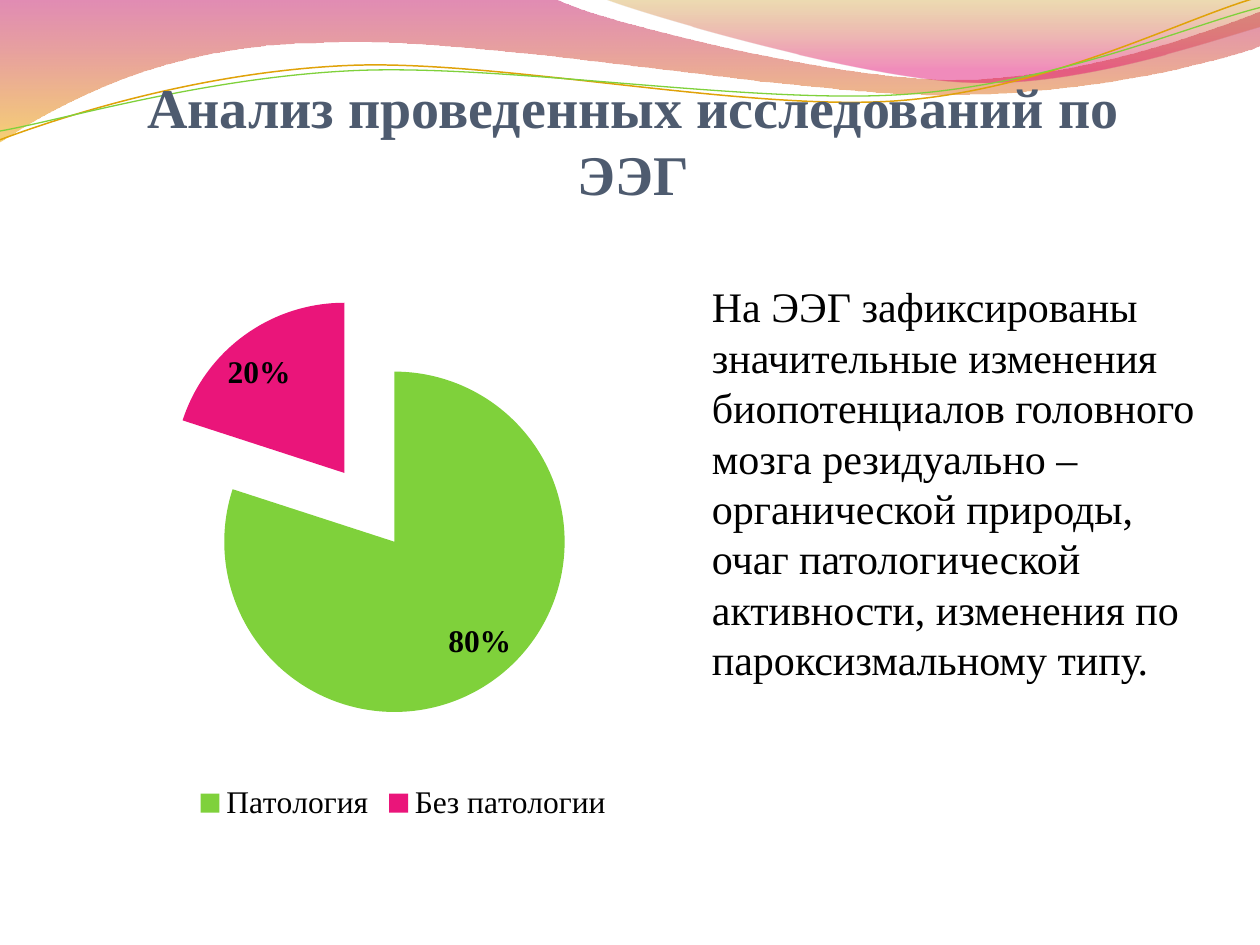
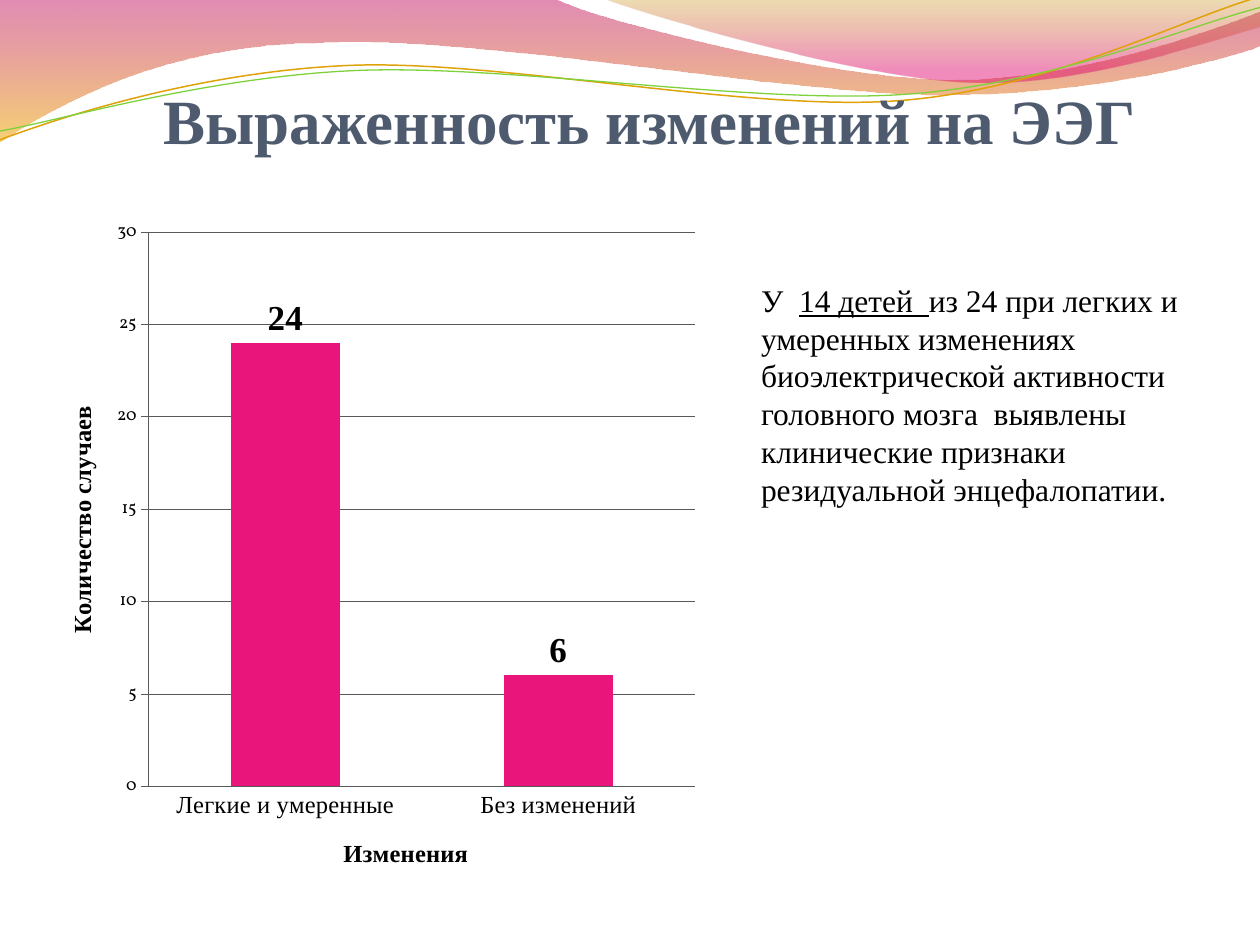
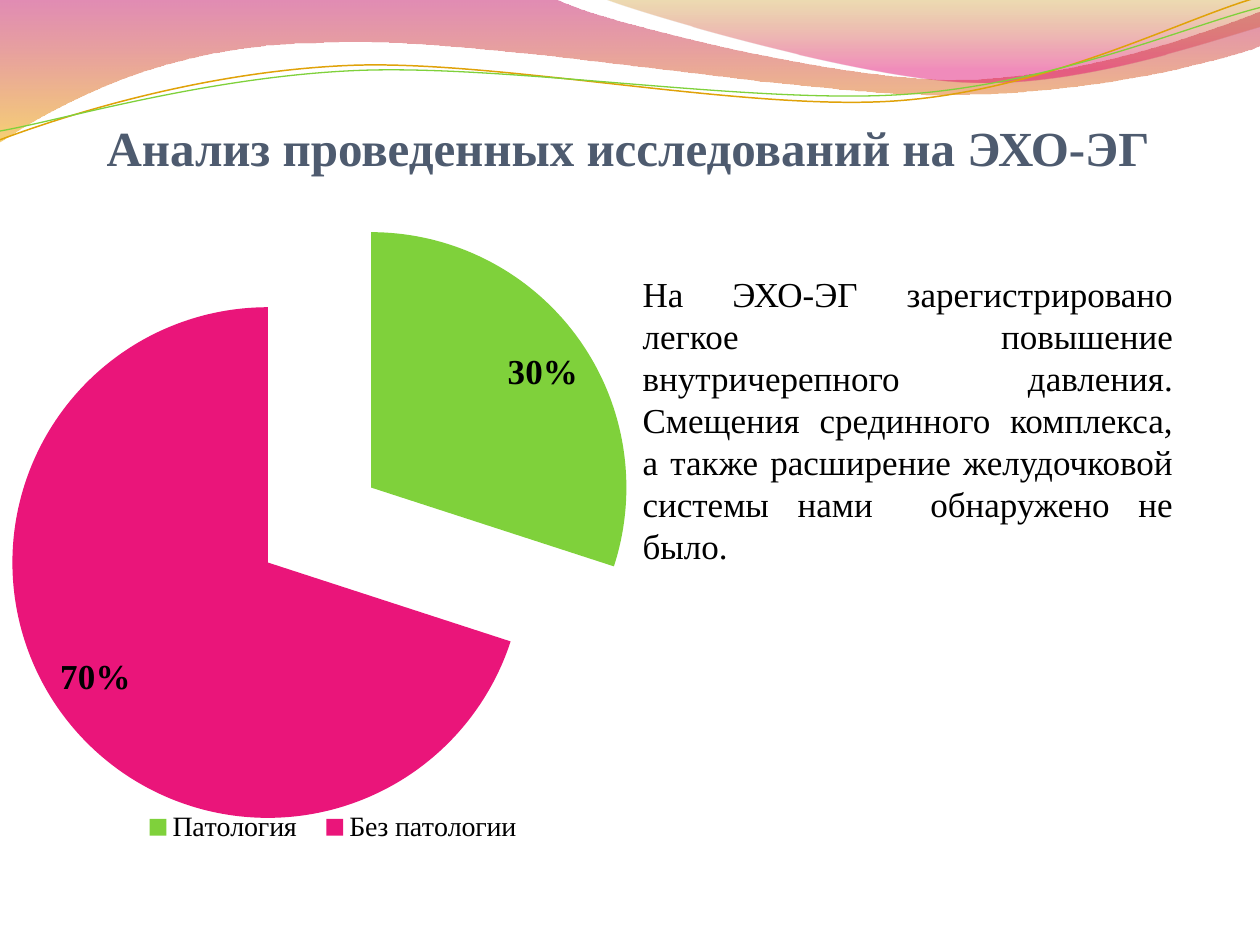
from lxml import etree
from pptx import Presentation
from pptx.chart.data import CategoryChartData
from pptx.dml.color import RGBColor
from pptx.enum.chart import XL_CHART_TYPE, XL_LABEL_POSITION, XL_LEGEND_POSITION, XL_TICK_MARK
from pptx.enum.text import MSO_ANCHOR, PP_ALIGN
from pptx.oxml import parse_xml
from pptx.oxml.ns import nsdecls, qn
from pptx.util import Inches, Pt

PIE, COLUMN = XL_CHART_TYPE.PIE, XL_CHART_TYPE.COLUMN_CLUSTERED
BEST_FIT, OUTSIDE_END = XL_LABEL_POSITION.BEST_FIT, XL_LABEL_POSITION.OUTSIDE_END
BOTTOM_LEGEND = XL_LEGEND_POSITION.BOTTOM
TICK_NONE, TICK_CROSS = XL_TICK_MARK.NONE, XL_TICK_MARK.OUTSIDE
LEFT, CENTER, JUSTIFY = PP_ALIGN.LEFT, PP_ALIGN.CENTER, PP_ALIGN.JUSTIFY
TOP, BOTTOM = MSO_ANCHOR.TOP, MSO_ANCHOR.BOTTOM

rgb = RGBColor.from_string
SERIF, CHART_FONT = "Times New Roman", "Vollkorn"
SLATE, BLACK, GRAY = "4E5B6F", "000000", "595959"
GREEN, PINK, ORANGE = "7FD13B", "EA157A", "E0A209"

# Header waves: pairs are corners, sixes are Bézier curves
BANDS = [
    ([(0, -0.01), (4.4, -0.01), (4.76, 0.17, 6.64, 0.63, 7.58, 0.63),
      (8.53, 0.63, 9.58, 0.26, 10, 0.09), (10.01, 0.36),
      (9.83, 0.44, 8.7, 0.76, 7.46, 0.75), (6.22, 0.75, 3.82, 0.28, 2.57, 0.34),
      (1.29, 0.35, 0.46, 0.83, -0.01, 1.13)],
     [(0, "BD0059", 45), (1, "F0AB00", 55)]),
    ([(4.79, -0.01), (5.09, 0.11, 6.82, 0.62, 7.69, 0.65),
      (8.56, 0.69, 9.61, 0.32, 10, 0.21), (10, 0)],
     [(0, "C38B00", 30), (0.8, "E1006B", 45)]),
]
STROKES = [
    ([(0, 1.11), (0.48, 0.93, 1.58, 0.57, 2.77, 0.52),
      (3.95, 0.47, 5.93, 0.89, 7.13, 0.8), (8.33, 0.71, 9.38, 0.15, 9.98, -0.02)],
     ORANGE, 0.85),
    ([(0, 1.04), (0.47, 0.96, 1.64, 0.61, 2.83, 0.56),
      (4.03, 0.51, 5.97, 0.83, 7.17, 0.75), (8.36, 0.67, 9.41, 0.21, 10, 0.06)],
     GREEN, 0.75),
]

PIE_CATS = ["Патология", "Без патологии"]
SLIDES = [
    dict(title="Анализ проведенных исследований по ЭЭГ",
         title_box=(0.75, 0.56, 8.55, 1.08), title_size=32,
         body=["На ЭЭГ зафиксированы значительные изменения биопотенциалов головного "
               "мозга резидуально – органической природы, очаг патологической "
               "активности, изменения по пароксизмальному типу."],
         body_box=(5.63, 2.18, 3.98, 4.49), body_size=24, align=LEFT,
         kind=PIE, chart_box=(0.23, 1.87, 5.94, 4.69), cats=PIE_CATS, values=(0.8, 0.2),
         plot=(0, 0.1, 0.91, 0.72), label_size=18, legend_size=18, legend=None),
    dict(title="Выраженность изменений на ЭЭГ",
         title_box=(0.78, 0.39, 8.75, 0.86), title_size=36,
         body=["У  ", "14 детей  ",
               "из 24 при легких и умеренных изменениях биоэлектрической активности "
               "головного мозга  выявлены  клинические признаки  резидуальной "
               "энцефалопатии."],
         body_box=(6.02, 2.18, 3.66, 4.78), body_size=18, align=LEFT,
         kind=COLUMN, chart_box=(0.31, 1.64, 5.31, 5.47),
         cats=["Легкие и умеренные", "Без изменений"], values=(24, 6),
         plot=None, label_size=20),
    dict(title="Анализ проведенных исследований на ЭХО-ЭГ",
         title_box=(0.75, 0.56, 8.47, 0.84), title_size=28,
         body=["На ЭХО-ЭГ зарегистрировано легкое повышение внутричерепного давления. "
               "Смещения срединного комплекса, а также расширение желудочковой системы "
               "нами  обнаружено не было."],
         body_box=(5.08, 2.11, 4.25, 3.92), body_size=20, align=JUSTIFY,
         kind=PIE, chart_box=(-0.16, 1.48, 5.39, 5.78), cats=PIE_CATS, values=(0.3, 0.7),
         plot=(0.03, 0.02, 0.94, 0.89), label_size=20, legend_size=16,
         legend=(0.22, 0.85, 0.6, 0.06)),
]


def add_wave(s, path, close):
    """Build a freeform through all points, then turn each six into a curve."""
    points = [(Inches(seg[i]), Inches(seg[i + 1]))
              for seg in path for i in range(0, len(seg), 2)]
    builder = s.shapes.build_freeform(*points[0])
    builder.add_line_segments(points[1:], close=close)
    sp = builder.convert_to_shape()
    sp.shadow.inherit = False
    lines = iter(list(sp.element.iter(qn("a:lnTo"))))
    for seg in path[1:]:
        line = next(lines)
        if len(seg) == 6:
            line.tag
            curve = etree.Element(qn("a:cubicBezTo"))
            line.addprevious(curve)
            for ln in (line, next(lines), next(lines)):
                curve.append(ln[0])
                ln.getparent().remove(ln)
    return sp


def set_layout(parent, index, box, target=""):
    """Give a plot area or legend a fixed place, in fractions of the chart."""
    for old in parent.findall(qn("c:layout")):
        parent.remove(old)
    sizes = "".join(f'<c:{k} val="{v}"/>' for k, v in zip("xywh", box))
    parent.insert(index, parse_xml(
        f'<c:layout {nsdecls("c")}><c:manualLayout>{target}'
        f'<c:xMode val="edge"/><c:yMode val="edge"/>{sizes}'
        '</c:manualLayout></c:layout>'))


prs = Presentation()
prs.slide_width, prs.slide_height = Inches(10), Inches(7.5)
blank = prs.slide_layouts[6]
for ph in list(blank.placeholders):
    ph.element.getparent().remove(ph.element)
slides = [prs.slides.add_slide(blank) for _ in SLIDES]

# Header waves, drawn once and moved to the shared layout
waves = []
for path, stops in BANDS:
    sp = add_wave(slides[0], path, True)
    sp.line.fill.background()
    sp.fill.gradient()
    sp.fill.gradient_angle = 270
    for stop, (position, color, _) in zip(sp.fill.gradient_stops, stops):
        stop.position = position
        stop.color.rgb = rgb(color)
    for clr, (_, _, alpha) in zip(sp.element.spPr.iter(qn("a:srgbClr")), stops):
        etree.SubElement(clr, qn("a:alpha")).set("val", str(alpha * 1000))
    waves.append(sp)
for path, color, width in STROKES:
    sp = add_wave(slides[0], path, False)
    sp.fill.background()
    sp.line.color.rgb = rgb(color)
    sp.line.width = Pt(width)
    waves.append(sp)
for sp in waves:
    blank.shapes.element.append(sp.element)

for s, spec in zip(slides, SLIDES):
    # Title and body text
    for box, runs, size, color, bold, align, anchor, side, bottom in [
        (spec["title_box"], [spec["title"]], spec["title_size"], SLATE, True,
         CENTER, BOTTOM, 0, 0),
        (spec["body_box"], spec["body"], spec["body_size"], BLACK, False,
         spec["align"], TOP, 0.02, 0.05),
    ]:
        tf = s.shapes.add_textbox(*map(Inches, box)).text_frame
        tf.word_wrap = True
        tf.vertical_anchor = anchor
        tf.margin_left = tf.margin_right = Inches(side)
        tf.margin_bottom = Inches(bottom)
        p = tf.paragraphs[0]
        p.alignment = align
        p.font.name, p.font.size, p.font.bold = SERIF, Pt(size), bold
        p.font.color.rgb = rgb(color)
        for i, text in enumerate(runs):
            r = p.add_run()
            r.text = text
            if i == 1:
                r.font.underline = True

    # Chart
    data = CategoryChartData()
    data.categories = spec["cats"]
    data.add_series("Series 1", spec["values"])
    chart = s.shapes.add_chart(spec["kind"], *map(Inches, spec["chart_box"]), data).chart
    chart.has_title = False
    chart.font.name, chart.font.size = CHART_FONT, Pt(10)
    chart.font.color.rgb = rgb(BLACK)
    plot_area = chart.element.find(".//" + qn("c:plotArea"))
    if spec["plot"]:
        set_layout(plot_area, 0, spec["plot"], '<c:layoutTarget val="inner"/>')
    is_pie = spec["kind"] == PIE
    plot = chart.plots[0]
    plot.vary_by_categories = is_pie
    series = plot.series[0]

    plot.has_data_labels = True
    labels = plot.data_labels
    labels.show_value = True
    labels.show_percentage = False
    labels.number_format = "0%" if is_pie else "General"
    labels.number_format_is_linked = False
    labels.position = BEST_FIT if is_pie else OUTSIDE_END
    labels.font.name, labels.font.size = SERIF, Pt(spec["label_size"])
    labels.font.bold = True
    labels.font.color.rgb = rgb(BLACK)

    chart.has_legend = is_pie
    if is_pie:
        for i, color in enumerate((GREEN, PINK)):
            fill = series.points[i].format.fill
            fill.solid()
            fill.fore_color.rgb = rgb(color)
        ser = plot_area.find(".//" + qn("c:ser"))
        ser.find(qn("c:dPt")).addprevious(
            parse_xml(f'<c:explosion {nsdecls("c")} val="25"/>'))
        legend = chart.legend
        legend.position = BOTTOM_LEGEND
        legend.include_in_layout = False
        legend.font.name, legend.font.size = SERIF, Pt(spec["legend_size"])
        if spec["legend"]:
            set_layout(chart.element.find(".//" + qn("c:legend")), 1, spec["legend"])
        continue

    # Columns and axes
    plot.gap_width = 150
    series.format.fill.solid()
    series.format.fill.fore_color.rgb = rgb(PINK)
    cat_axis, val_axis = chart.category_axis, chart.value_axis
    cat_axis.major_tick_mark, val_axis.major_tick_mark = TICK_NONE, TICK_CROSS
    cat_axis.tick_labels.font.name = SERIF
    cat_axis.tick_labels.font.size = Pt(14)
    val_axis.minimum_scale, val_axis.maximum_scale, val_axis.major_unit = 0, 30, 5
    val_axis.has_major_gridlines = True
    for part in (cat_axis, val_axis, val_axis.major_gridlines):
        part.format.line.color.rgb = rgb(GRAY)
        part.format.line.width = Pt(0.5)
    for axis, text in ((cat_axis, "Изменения"), (val_axis, "Количество случаев")):
        tf = axis.axis_title.text_frame
        tf.text = text
        font = tf.paragraphs[0].font
        font.name, font.size, font.bold = SERIF, Pt(14), True

prs.save("out.pptx")
